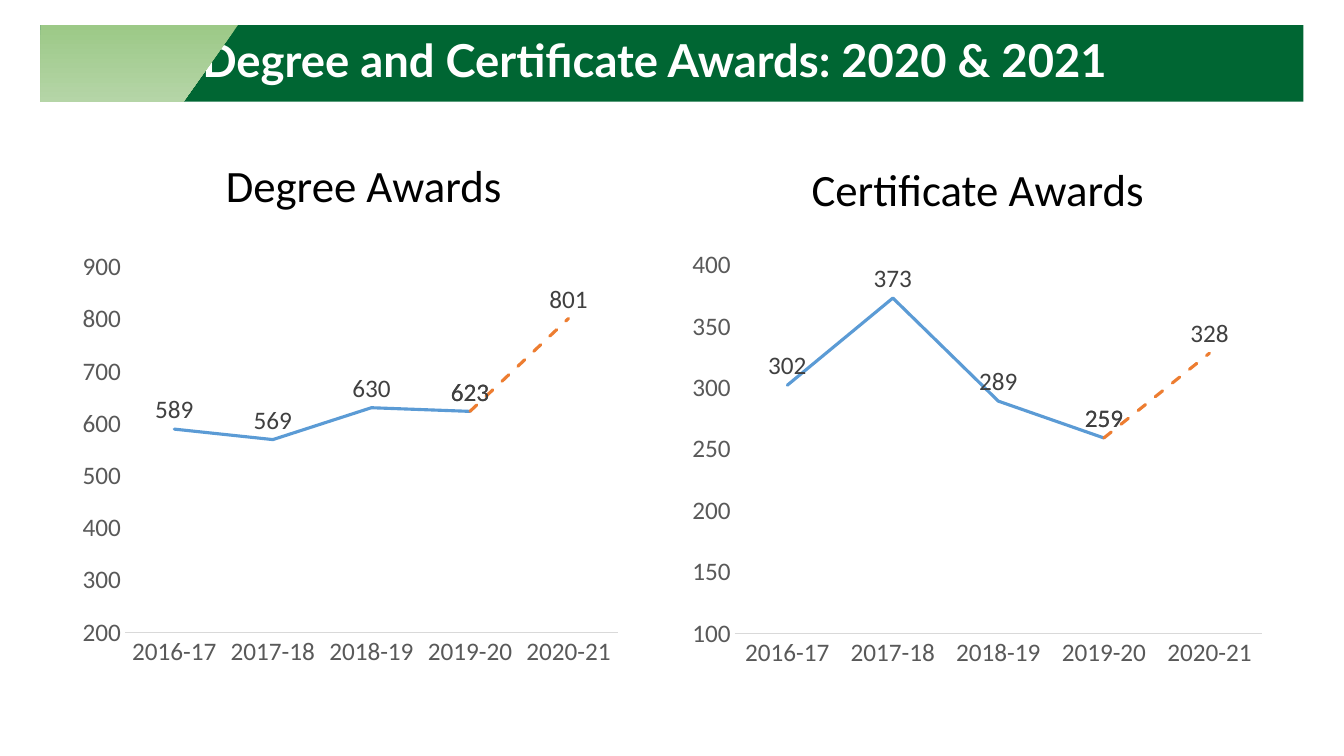
import dataclasses
import typing

import lxml.etree
import pptx
import pptx.chart.data
import pptx.dml.color
import pptx.enum.chart
import pptx.enum.dml
import pptx.enum.shapes
import pptx.enum.text
import pptx.oxml.ns
import pptx.util

Pt = pptx.util.Pt
Rgb = pptx.dml.color.RGBColor.from_string
qn = pptx.oxml.ns.qn


@dataclasses.dataclass(frozen=True)
class Theme:
    band: str = "006633"
    pale: str = "B5D5A7"
    leaf: str = "9CC987"
    white: str = "FFFFFF"
    black: str = "000000"
    axis: str = "595959"
    rule: str = "D9D9D9"
    label: str = "404040"
    past: str = "5B9BD5"
    new: str = "ED7D31"
    body: str = "Calibri"
    head: str = "Lato"
    small: float = 18
    large: float = 32
    title: float = 32.4


THEME = Theme()
YEARS = ["2016-17", "2017-18", "2018-19", "2019-20", "2020-21"]


@dataclasses.dataclass(frozen=True)
class Box:
    left: float
    top: float
    width: float
    height: float

    def spot(self) -> list[int]:
        return [Pt(v) for v in dataclasses.astuple(self)]


@dataclasses.dataclass(frozen=True)
class Label:
    text: str
    box: Box
    font: str = THEME.body
    size: float = THEME.large
    color: str = THEME.black
    bold: bool = False
    space: float = 1.0
    shadow: bool = False


@dataclasses.dataclass(frozen=True)
class Graph:
    box: Box
    awards: list[int]
    low: int
    high: int
    step: int


LABELS = [
    Label("Degree Awards", Box(79.2, 96.5, 361.4, 76.3), space=0.9),
    Label("Certificate Awards", Box(517.7, 96.5, 361.4, 76.3), shadow=True),
]
TITLE = Label("Degree and Certificate Awards: 2020 & 2021 ",
              Box(57.6, 25.2, 828, 41.8), THEME.head, THEME.title,
              THEME.white, True, 0.8)
GRAPHS = [
    Graph(Box(51.1, 173.5, 398.2, 308.9), [589, 569, 630, 623, 801],
          200, 900, 100),
    Graph(Box(486, 172.1, 424.1, 311), [302, 373, 289, 259, 328],
          100, 400, 50),
]
BAND = Box(28.8, 18, 902.2, 54.7)
WEDGE = [(28.8, 72.7), (131, 72.7), (169.9, 18), (28.8, 18)]


def put(item: typing.Any, vals: dict[str, typing.Any]) -> None:
    for name, val in vals.items():
        setattr(item, name, val)


def style(font: typing.Any, name: str, size: float, color: str,
          bold: bool = False) -> None:
    put(font, {"name": name, "size": Pt(size), "bold": bold})
    font.color.rgb = Rgb(color)


def shade(run: typing.Any) -> None:
    sub = lxml.etree.SubElement
    fx = lxml.etree.Element(qn("a:effectLst"))
    cast = sub(fx, qn("a:outerShdw"), blurRad="38100", dist="19050",
               dir="2700000", algn="tl")
    tint = sub(cast, qn("a:srgbClr"), val=THEME.black)
    sub(tint, qn("a:alpha"), val="40000")
    run.font.fill._xPr.find(qn("a:solidFill")).addnext(fx)


def write(slide: typing.Any, item: Label) -> None:
    frame = slide.shapes.add_textbox(*item.box.spot()).text_frame
    put(frame, {"word_wrap": True,
                "vertical_anchor": pptx.enum.text.MSO_ANCHOR.MIDDLE})
    para = frame.paragraphs[0]
    put(para, {"alignment": pptx.enum.text.PP_ALIGN.CENTER,
               "line_spacing": item.space})
    run = para.add_run()
    run.text = item.text
    style(run.font, item.font, item.size, item.color, item.bold)
    if item.shadow:
        shade(run)


def plot(slide: typing.Any, item: Graph) -> None:
    data = pptx.chart.data.CategoryChartData()
    data.categories = YEARS
    data.add_series("Series 1", item.awards[:-1] + [None])
    data.add_series("Series 2", [None] * 3 + item.awards[-2:])
    kind = pptx.enum.chart.XL_CHART_TYPE.LINE
    chart = slide.shapes.add_chart(kind, *item.box.spot(), data).chart
    put(chart, {"has_legend": False, "has_title": False})
    style(chart.font, THEME.body, THEME.small, THEME.black)
    tick = pptx.enum.chart.XL_TICK_MARK.NONE
    for axis in (chart.category_axis, chart.value_axis):
        put(axis, {"major_tick_mark": tick, "minor_tick_mark": tick,
                   "has_major_gridlines": False})
        style(axis.tick_labels.font, THEME.body, THEME.small, THEME.axis)
    rule = chart.category_axis.format.line
    rule.color.rgb = Rgb(THEME.rule)
    rule.width = Pt(0.75)
    put(chart.value_axis, {"minimum_scale": item.low,
                           "maximum_scale": item.high,
                           "major_unit": item.step})
    chart.value_axis.format.line.fill.background()
    chart.plots[0].vary_by_categories = False
    dash = pptx.enum.dml.MSO_LINE.DASH
    looks = [(THEME.past, None), (THEME.new, dash)]
    for series, (color, form) in zip(chart.plots[0].series, looks):
        series.smooth = False
        series.marker.style = pptx.enum.chart.XL_MARKER_STYLE.NONE
        line = series.format.line
        line.color.rgb = Rgb(color)
        put(line, {"width": Pt(2.25), "dash_style": form})
        line._get_or_add_ln().set("cap", "rnd")
        tags = series.data_labels
        put(tags, {"show_value": True,
                   "position": pptx.enum.chart.XL_LABEL_POSITION.ABOVE})
        style(tags.font, THEME.body, THEME.small, THEME.label)


def plain(shape: typing.Any) -> None:
    shape.shadow.inherit = False
    shape.line.fill.background()


def band(slide: typing.Any) -> None:
    kind = pptx.enum.shapes.MSO_SHAPE.RECTANGLE
    bar = slide.shapes.add_shape(kind, *BAND.spot())
    plain(bar)
    bar.fill.solid()
    bar.fill.fore_color.rgb = Rgb(THEME.band)


def wedge(slide: typing.Any) -> None:
    first, *rest = [(Pt(x), Pt(y)) for x, y in WEDGE]
    path = slide.shapes.build_freeform(*first)
    path.add_line_segments(rest, close=True)
    shape = path.convert_to_shape()
    plain(shape)
    shape.fill.gradient()
    shape.fill.gradient_angle = 270
    for stop, color in zip(shape.fill.gradient_stops,
                           (THEME.leaf, THEME.pale)):
        stop.color.rgb = Rgb(color)


def main() -> None:
    deck = pptx.Presentation()
    put(deck, {"slide_width": Pt(960), "slide_height": Pt(540)})
    slide = deck.slides.add_slide(deck.slide_layouts[6])
    for graph in GRAPHS:
        plot(slide, graph)
    for label in LABELS:
        write(slide, label)
    band(slide)
    write(slide, TITLE)
    wedge(slide)
    deck.save("out.pptx")


if __name__ == "__main__":
    main()
